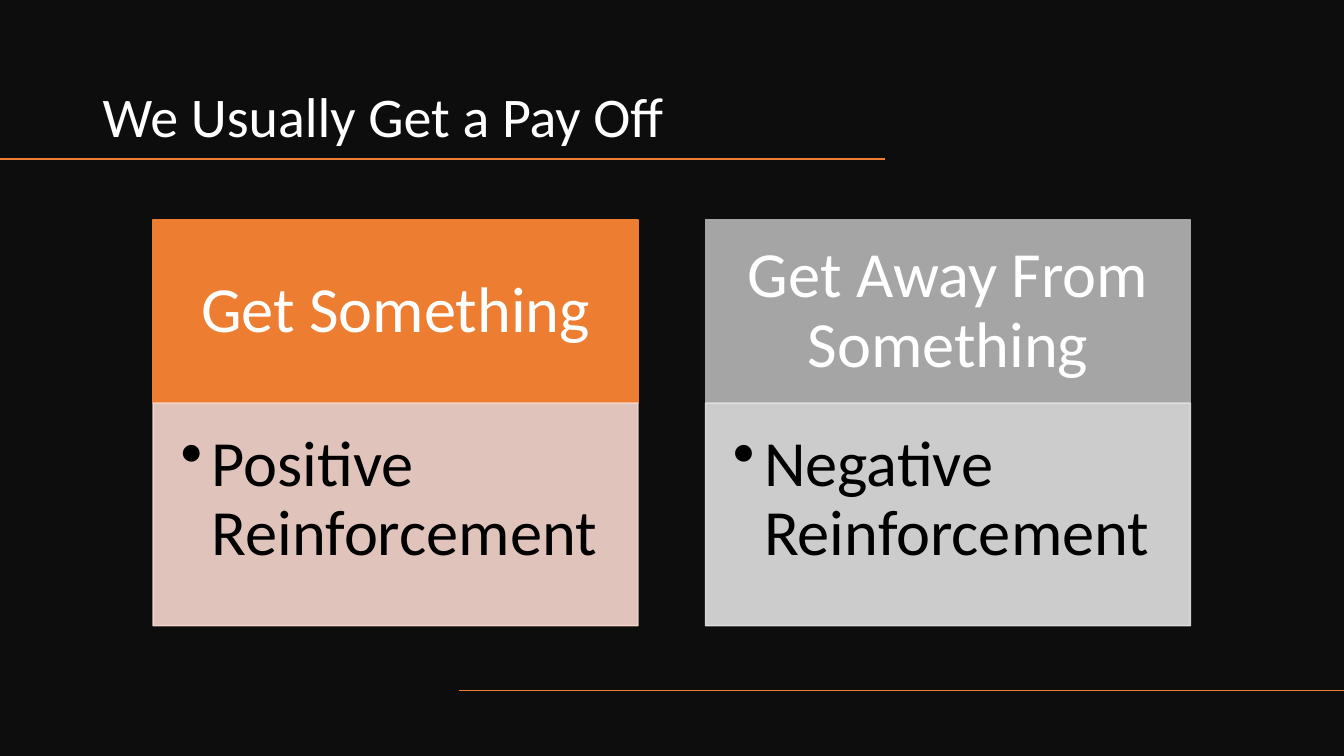
from lxml import etree
from pptx import Presentation, util as u
from pptx.dml.color import RGBColor
from pptx.enum import shapes, text
from pptx.oxml.ns import qn

Cm, Pt = u.Cm, u.Pt


def rgb(value):
    return RGBColor.from_string(value)


def write(sp, words, color, size, insets, anchor, align, bullet=False):
    tf = sp.text_frame
    sides = ("margin_left", "margin_top", "margin_right", "margin_bottom")
    frame = dict(zip(sides, map(Cm, insets)), word_wrap=True, vertical_anchor=anchor)
    for name, value in frame.items():
        setattr(tf, name, value)
    p = tf.paragraphs[0]
    p.alignment, p.line_spacing = align, 0.9
    if bullet:
        pPr = p._p.get_or_add_pPr()
        pPr.set("marL", str(Cm(0.79)))
        pPr.set("indent", str(-Cm(0.79)))
        etree.SubElement(pPr, qn("a:buChar")).set("char", "•")
    r = p.add_run()
    r.text = words
    for name, value in {"name": "Calibri", "size": Pt(size)}.items():
        setattr(r.font, name, value)
    r.font.color.rgb = rgb(color)


prs = Presentation()
prs.slide_width, prs.slide_height = Cm(33.87), Cm(19.05)
s = prs.slides.add_slide(prs.slide_layouts[6])
LEFT, CENTER = text.PP_ALIGN.LEFT, text.PP_ALIGN.CENTER
TOP, MIDDLE, BOTTOM = text.MSO_ANCHOR.TOP, text.MSO_ANCHOR.MIDDLE, text.MSO_ANCHOR.BOTTOM

backdrop = s.shapes.add_shape(shapes.MSO_SHAPE.RECTANGLE, 0, 0, prs.slide_width, prs.slide_height)
backdrop.shadow.inherit = False
backdrop.fill.solid()
backdrop.fill.fore_color.rgb = rgb("0D0D0D")
backdrop.line.fill.background()

title = s.shapes.add_textbox(Cm(2.34), Cm(1.07), Cm(19.96), Cm(2.84))
write(title, "We Usually Get a Pay Off", "FFFFFF", 40, (0.25, 0.13, 0.25, 0.13), BOTTOM, LEFT)

for start, end, y in ((22.3, 0, 4.01), (33.87, 11.56, 17.4)):
    rule = s.shapes.add_connector(shapes.MSO_CONNECTOR.STRAIGHT, Cm(start), Cm(y), Cm(end), Cm(y))
    rule.line.color.rgb = rgb("ED7D31")
    rule.line.width = Pt(1)
    etree.SubElement(rule._element.spPr, qn("a:effectLst"))

HEADER = dict(color="FFFFFF", size=46, insets=(0.91, 0.51, 0.91, 0.51), anchor=MIDDLE, align=CENTER)
BODY = dict(color="000000", size=46, insets=(0.69, 0.69, 0.91, 1.02), anchor=TOP, align=LEFT, bullet=True)
columns = (
    (("Get Something", "ED7D31"), ("Positive Reinforcement", "F8D7CE")),
    (("Get Away From Something", "A5A5A5"), ("Negative Reinforcement", "E1E1E1")),
)
rows = ((5.54, 4.62, HEADER, 100), (10.16, 5.61, BODY, 90))

for i, column in enumerate(columns):
    for (words, color), (top, height, style, opacity) in zip(column, rows):
        sp = s.shapes.add_shape(
            shapes.MSO_SHAPE.RECTANGLE, Cm(3.86 + 13.92 * i), Cm(top), Cm(12.22), Cm(height))
        sp.shadow.inherit = False
        sp.line.width = Pt(1)
        for fill in (sp.fill, sp.line.fill):
            fill.solid()
            fill.fore_color.rgb = rgb(color)
        if opacity < 100:
            for clr in sp._element.spPr.iter(qn("a:srgbClr")):
                etree.SubElement(clr, qn("a:alpha")).set("val", str(opacity * 1000))
        write(sp, words, **style)

prs.save("out.pptx")
